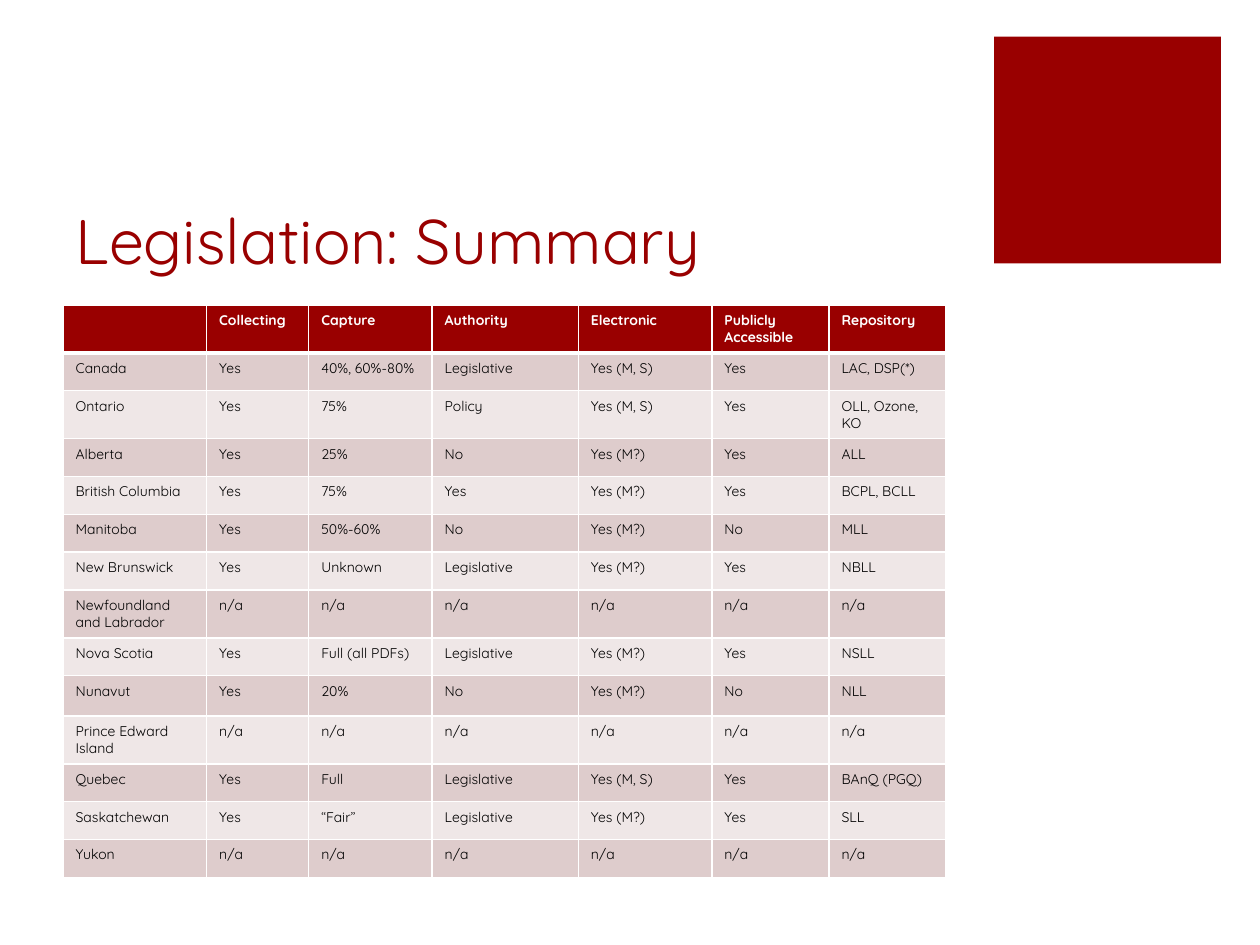
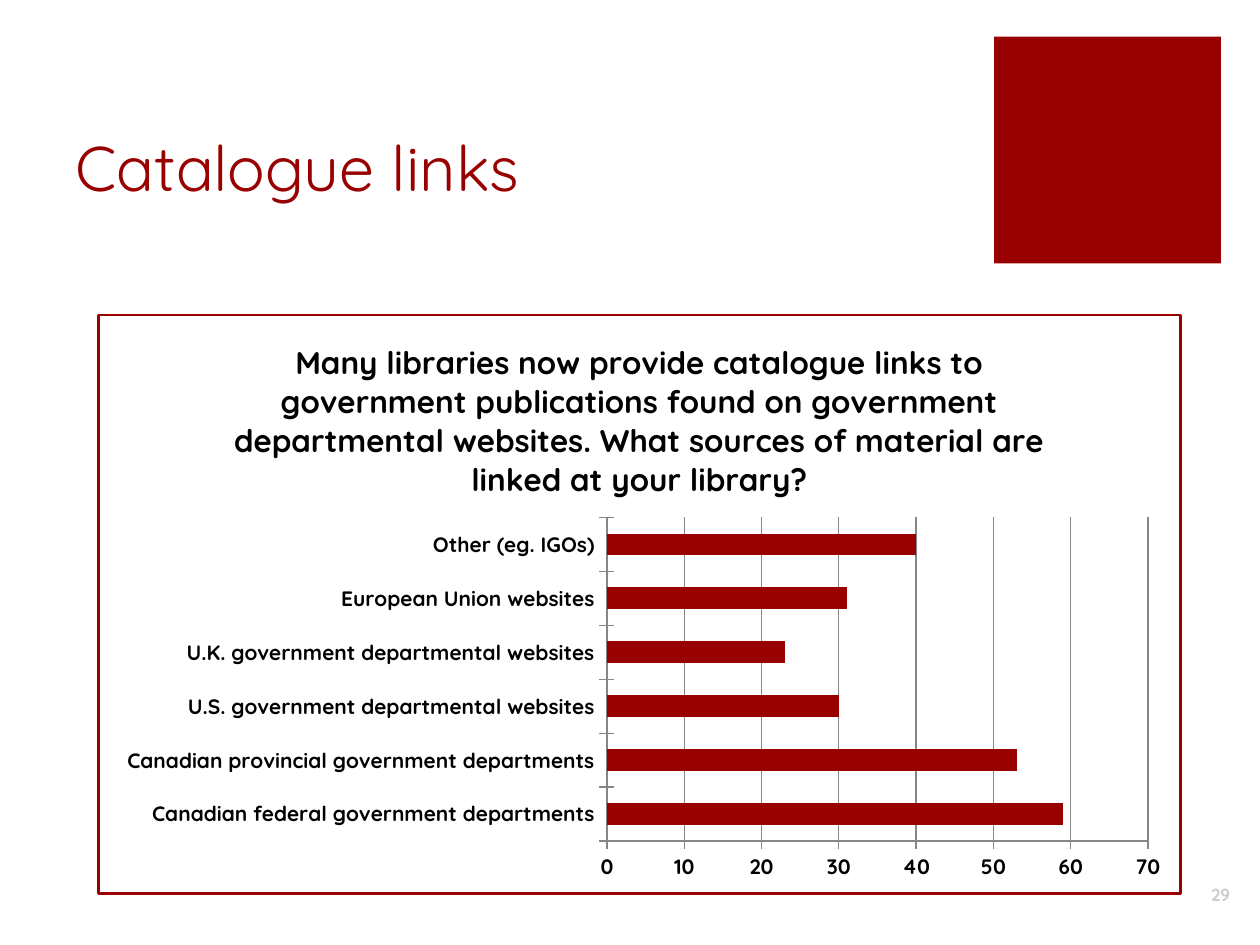
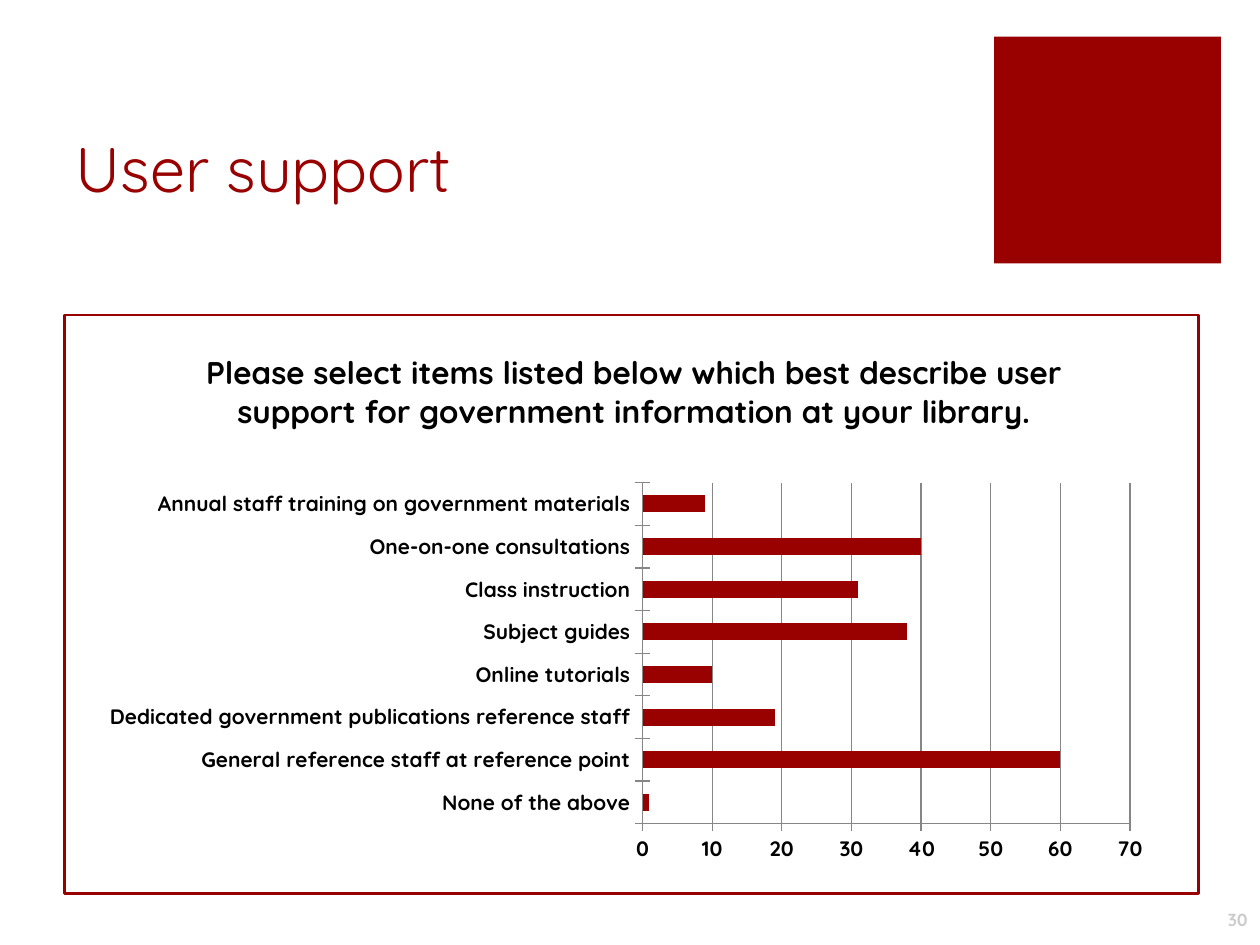
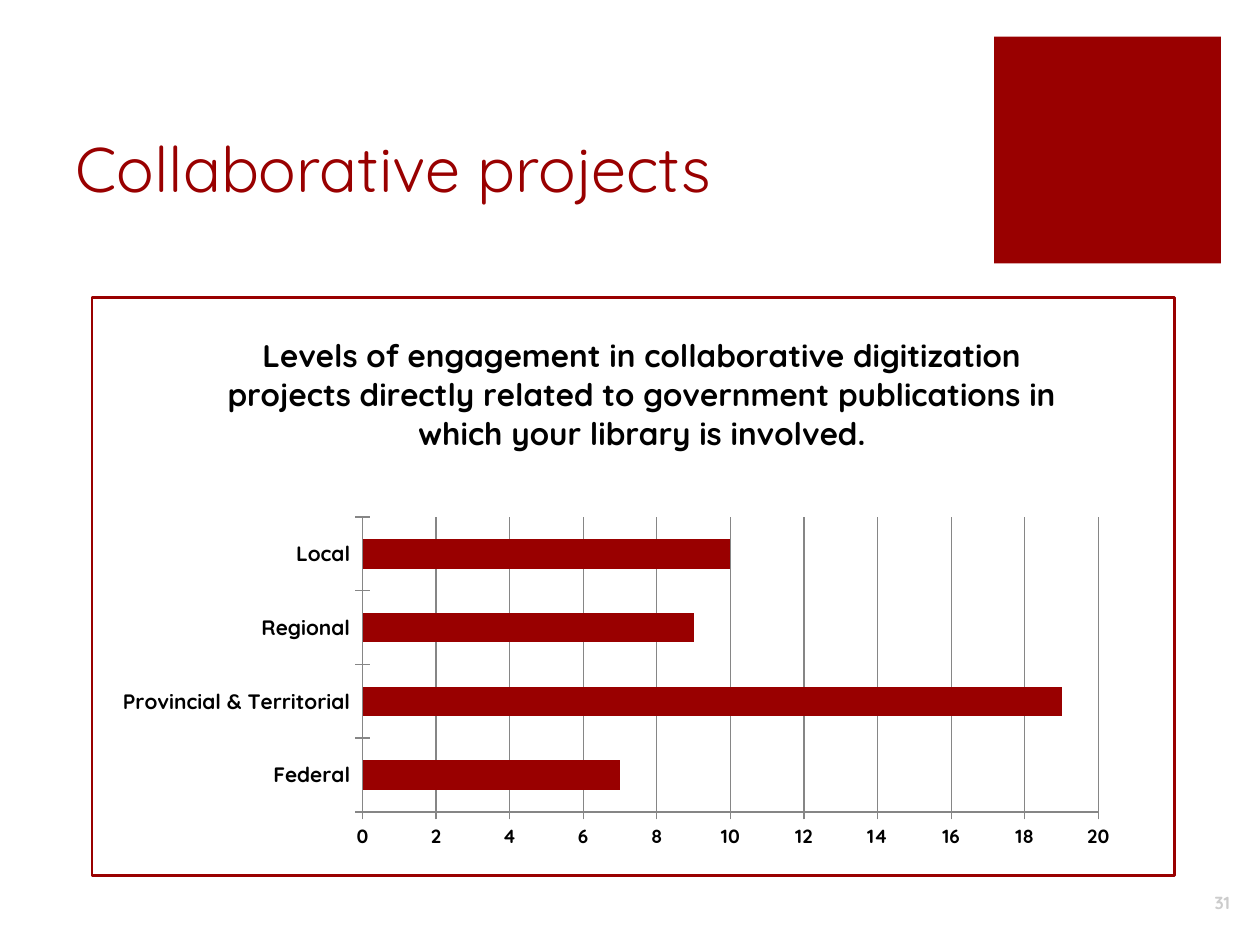
from lxml import etree
from pptx import Presentation
from pptx.chart.data import CategoryChartData
from pptx.dml.color import RGBColor
from pptx.enum.chart import XL_CHART_TYPE, XL_TICK_MARK
from pptx.enum.shapes import MSO_SHAPE
from pptx.enum.text import MSO_ANCHOR, MSO_AUTO_SIZE, PP_ALIGN
from pptx.oxml import parse_xml
from pptx.oxml.ns import nsdecls, qn
from pptx.util import Inches, Pt

BAR_CLUSTERED = XL_CHART_TYPE.BAR_CLUSTERED
TICK_CROSS = XL_TICK_MARK.CROSS
RECTANGLE = MSO_SHAPE.RECTANGLE
BOTTOM, MIDDLE = MSO_ANCHOR.BOTTOM, MSO_ANCHOR.MIDDLE
LEFT, RIGHT = PP_ALIGN.LEFT, PP_ALIGN.RIGHT
NO_AUTOFIT = MSO_AUTO_SIZE.NONE

FONT = "Quicksand"
COLORS = {
    "red": "990000",
    "white": "FFFFFF",
    "black": "000000",
    "band dark": "DECCCC",
    "band light": "EFE7E7",
    "grid": "868686",
    "number": "CCCCCC",
}


def style_font(font, size, color, bold=False):
    font.name = FONT
    font.size = Pt(size)
    font.bold = bold
    font.color.rgb = RGBColor.from_string(COLORS[color])


def set_layout(parent, index, fractions, inner=False):
    """Place a chart part at fractions (x, y, w, h) of the chart area."""
    for old_layout in parent.findall(qn("c:layout")):
        parent.remove(old_layout)
    settings = [("layoutTarget", "inner")] if inner else []
    settings += [("xMode", "edge"), ("yMode", "edge")]
    settings += zip("xywh", fractions)
    children = "".join(f'<c:{name} val="{value}"/>' for name, value in settings)
    parent.insert(index, parse_xml(
        f'<c:layout {nsdecls("c")}><c:manualLayout>{children}</c:manualLayout></c:layout>'))


presentation = Presentation()
presentation.slide_width = Inches(10)
presentation.slide_height = Inches(7.5)
title_layout = presentation.slide_layouts[5]

# Titles, the same on every slide but for their height
slides = []
for title, top in [("Legislation: Summary", 1), ("Catalogue links", 0.42),
                   ("User support", 0.43), ("Collaborative projects", 0.43)]:
    slide = presentation.slides.add_slide(title_layout)
    title_shape = slide.shapes.title
    title_shape.left, title_shape.top = Inches(0.5), Inches(top)
    title_shape.width, title_shape.height = Inches(7.12), Inches(1.25)
    frame = title_shape.text_frame
    frame.text = title
    frame.auto_size = NO_AUTOFIT
    frame.vertical_anchor = BOTTOM
    frame.paragraphs[0].alignment = LEFT
    style_font(frame.paragraphs[0].font, 36, "red")
    slides.append(slide)

# Red square, moved to the layout so that all slides share it
square = slides[0].shapes.add_shape(
    RECTANGLE, Inches(7.89), Inches(0.29), Inches(1.8), Inches(1.8))
square.shadow.inherit = False
square.fill.solid()
square.fill.fore_color.rgb = RGBColor.from_string(COLORS["red"])
square.line.fill.background()
square.element.nvSpPr.cNvPr.set("id", "20")
title_layout.shapes.element.append(square.element)

# Summary table
NOT_AVAILABLE = ["n/a"] * 6
rows = [
    ["", "Collecting", "Capture", "Authority", "Electronic", "Publicly Accessible", "Repository"],
    ["Canada", "Yes", "40%, 60%-80%", "Legislative", "Yes (M, S)", "Yes", "LAC, DSP(*)"],
    ["Ontario", "Yes", "75%", "Policy", "Yes (M, S)", "Yes", "OLL, Ozone, KO"],
    ["Alberta", "Yes", "25%", "No", "Yes (M?)", "Yes", "ALL"],
    ["British Columbia", "Yes", "75%", "Yes", "Yes (M?)", "Yes", "BCPL, BCLL"],
    ["Manitoba", "Yes", "50%-60%", "No", "Yes (M?)", "No", "MLL"],
    ["New Brunswick", "Yes", "Unknown", "Legislative", "Yes (M?)", "Yes", "NBLL"],
    ["Newfoundland and Labrador", *NOT_AVAILABLE],
    ["Nova Scotia", "Yes", "Full (all PDFs)", "Legislative", "Yes (M?)", "Yes", "NSLL"],
    ["Nunavut", "Yes", "20%", "No", "Yes (M?)", "No", "NLL"],
    ["Prince Edward Island", *NOT_AVAILABLE],
    ["Quebec", "Yes", "Full", "Legislative", "Yes (M, S)", "Yes", "BAnQ (PGQ)"],
    ["Saskatchewan", "Yes", "“Fair”", "Legislative", "Yes (M?)", "Yes", "SLL"],
    ["Yukon", *NOT_AVAILABLE],
]
column_widths = [1.14, 0.81, 0.98, 1.16, 1.06, 0.93, 0.93]
row_heights = {0: 0.35, 2: 0.35, 7: 0.35, 9: 0.32, 10: 0.35}

table = slides[0].shapes.add_table(
    len(rows), len(column_widths), Inches(0.5), Inches(2.42), Inches(7.01), Inches(4.49)).table
for column, width in zip(table.columns, column_widths):
    column.width = Inches(width)
for row_index, texts in enumerate(rows):
    table.rows[row_index].height = Inches(row_heights.get(row_index, 0.3))
    is_header = row_index == 0
    fill = "red" if is_header else "band dark" if row_index % 2 else "band light"
    edges = {"L": 1, "R": 1, "T": 3 if row_index == 1 else 1, "B": 3 if is_header else 1}
    for column_index, text in enumerate(texts):
        cell = table.cell(row_index, column_index)
        cell.fill.solid()
        cell.fill.fore_color.rgb = RGBColor.from_string(COLORS[fill])
        paragraph = cell.text_frame.paragraphs[0]
        if text:
            cell.text = text
            paragraph = cell.text_frame.paragraphs[0]
            style_font(paragraph.font, 8, "white" if is_header else "black", is_header)
        else:
            etree.SubElement(paragraph._p, qn("a:endParaRPr"), sz="800")
        properties = cell._tc.get_or_add_tcPr()
        for edge_index, (edge, width) in enumerate(edges.items()):
            properties.insert(edge_index, parse_xml(
                f'<a:ln{edge} {nsdecls("a")} w="{Pt(width)}"><a:solidFill>'
                f'<a:srgbClr val="{COLORS["white"]}"/></a:solidFill></a:ln{edge}>'))

# Survey charts with their slide numbers
surveys = [
    {
        "title": "Many libraries now provide catalogue links to government publications found on "
                 "government departmental websites. What sources of material are linked at your library?",
        "answers": {
            "Canadian federal government departments": 59,
            "Canadian provincial government departments": 53,
            "U.S. government departmental websites": 30,
            "U.K. government departmental websites": 23,
            "European Union websites": 31,
            "Other (eg. IGOs)": 40,
        },
        "box": (0.77, 2.49, 8.61, 4.61), "plot": (0.47, 0.35, 0.5, 0.56), "title at": None,
        "maximum": 70, "step": 10, "value size": 12,
        "number": "29", "number at": (9.31, 6.9),
    },
    {
        "title": "Please select items listed below which best describe user support for "
                 "government information at your library.",
        "answers": {
            "None of the above": 1,
            "General reference staff at reference point": 60,
            "Dedicated government publications reference staff": 19,
            "Online tutorials": 10,
            "Subject guides": 38,
            "Class instruction": 31,
            "One-on-one consultations": 40,
            "Annual staff training on government materials": 9,
        },
        "box": (0.5, 2.49, 9.02, 4.61), "plot": (0.51, 0.29, 0.43, 0.59), "title at": (0.12, 0.05),
        "maximum": 70, "step": 10, "value size": 12,
        "number": "30", "number at": (9.45, 7.1),
    },
    {
        "title": "Levels of engagement in collaborative digitization projects directly related to "
                 "government publications in which your library is involved.",
        "answers": {"Federal": 7, "Provincial & Territorial": 19, "Regional": 9, "Local": 10},
        "box": (0.72, 2.35, 8.61, 4.61), "plot": (0.25, 0.38, 0.68, 0.51), "title at": (0.12, 0.05),
        "maximum": 20, "step": 2, "value size": 11,
        "number": "31", "number at": (9.31, 6.96),
    },
]

for slide, survey in zip(slides[1:], surveys):
    chart_data = CategoryChartData()
    chart_data.categories = list(survey["answers"])
    chart_data.add_series("Series 1", list(survey["answers"].values()))
    chart = slide.shapes.add_chart(
        BAR_CLUSTERED, *[Inches(length) for length in survey["box"]], chart_data).chart
    chart.has_legend = False
    style_font(chart.font, 10, "black")

    # White chart area with a red border
    chart.element.find(qn("c:txPr")).addprevious(parse_xml(
        f'<c:spPr {nsdecls("c", "a")}>'
        f'<a:solidFill><a:srgbClr val="{COLORS["white"]}"/></a:solidFill>'
        f'<a:ln w="{Pt(1.5)}"><a:solidFill><a:srgbClr val="{COLORS["red"]}"/></a:solidFill></a:ln>'
        '</c:spPr>'))

    # Question as chart title
    chart.has_title = True
    title_frame = chart.chart_title.text_frame
    title_frame.text = survey["title"]
    style_font(title_frame.paragraphs[0].font, 18, "black", True)
    if survey["title at"]:
        set_layout(title_frame._txBody.getparent().getparent(), 1, survey["title at"])
    set_layout(chart.element.chart.plotArea, 0, survey["plot"], inner=True)

    # Bars
    plot = chart.plots[0]
    plot.gap_width = 150
    plot.vary_by_categories = False
    bars = plot.series[0].format.fill
    bars.solid()
    bars.fore_color.rgb = RGBColor.from_string(COLORS["red"])

    # Axes and gridlines
    value_axis = chart.value_axis
    value_axis.minimum_scale = 0
    value_axis.maximum_scale = survey["maximum"]
    value_axis.major_unit = survey["step"]
    value_axis.has_major_gridlines = True
    for axis, size in [(chart.category_axis, 12), (value_axis, survey["value size"])]:
        axis.major_tick_mark = TICK_CROSS
        style_font(axis.tick_labels.font, size, "black", True)
    for line in [chart.category_axis.format.line, value_axis.format.line,
                 value_axis.major_gridlines.format.line]:
        line.color.rgb = RGBColor.from_string(COLORS["grid"])
        line.width = Pt(0.75)

    # Slide number
    left, top = survey["number at"]
    number_box = slide.shapes.add_textbox(Inches(left), Inches(top), Inches(0.55), Inches(0.4))
    number_frame = number_box.text_frame
    number_frame.word_wrap = True
    number_frame.vertical_anchor = MIDDLE
    number_frame.text = survey["number"]
    number_frame.paragraphs[0].alignment = RIGHT
    style_font(number_frame.paragraphs[0].font, 10, "number", True)

presentation.save("out.pptx")
